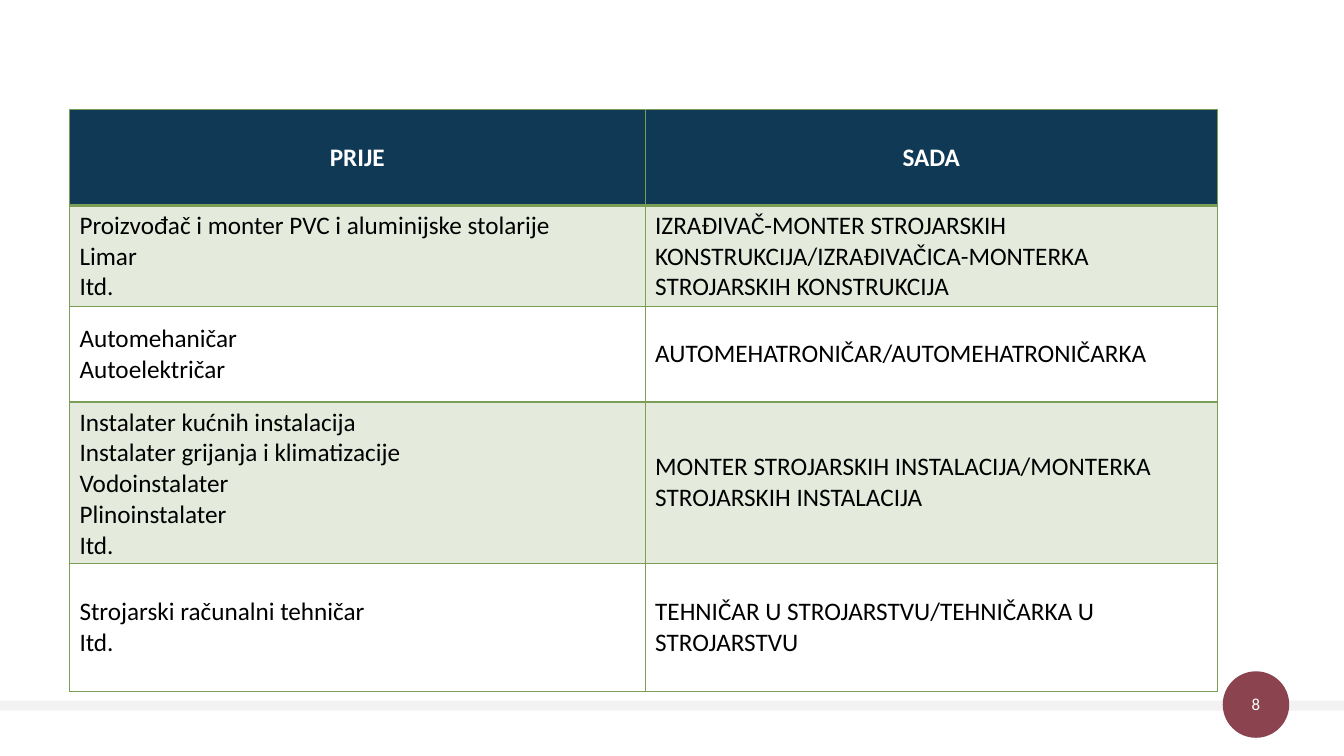
"""Build the slide comparing former and current vocational programmes."""
from lxml import etree
from pptx import Presentation, util as u
from pptx.dml.color import RGBColor
from pptx.enum import shapes, text
from pptx.oxml.ns import qn


def paint(fill, color):
    fill.solid()
    fill.fore_color.rgb = RGBColor.from_string(color)


def write(frame, lines, size, color, align, bold=False):
    frame.word_wrap = True
    for i, line in enumerate(lines):
        para = frame.paragraphs[0] if i == 0 else frame.add_paragraph()
        para.alignment = align
        run = para.add_run()
        run.text = line
        run.font.name = "Calibri"
        run.font.size = u.Pt(size)
        run.font.bold = bold
        paint(run.font.fill, color)


GREEN = "7A9E56"
ROWS = [
    (68.4, ["PRIJE"], ["SADA"]),
    (68.4, ["Proizvođač i monter PVC i aluminijske stolarije", "Limar", "Itd."],
     ["IZRAĐIVAČ-MONTER STROJARSKIH KONSTRUKCIJA/"
      "IZRAĐIVAČICA-MONTERKA STROJARSKIH KONSTRUKCIJA"]),
    (68.4, ["Automehaničar", "Autoelektričar"],
     ["AUTOMEHATRONIČAR/AUTOMEHATRONIČARKA"]),
    (68.4, ["Instalater kućnih instalacija", "Instalater grijanja i klimatizacije",
            "Vodoinstalater", "Plinoinstalater", "Itd."],
     ["MONTER STROJARSKIH INSTALACIJA/MONTERKA STROJARSKIH INSTALACIJA"]),
    (91.4, ["Strojarski računalni tehničar", "Itd."],
     ["TEHNIČAR U STROJARSTVU/TEHNIČARKA U STROJARSTVU"]),
]

deck = Presentation()
deck.slide_width, deck.slide_height = u.Pt(960), u.Pt(540)
slide = deck.slides.add_slide(deck.slide_layouts[6])

kind = shapes.MSO_SHAPE
for form, box, color in [
    (kind.RECTANGLE, (0, 500.4, 960, 7.2), "F2F2F2"),
    (kind.OVAL, (873.4, 479.5, 47.5, 47.5), "8A434F"),
]:
    shape = slide.shapes.add_shape(form, *map(u.Pt, box))
    shape.shadow.inherit = False
    shape.line.fill.background()
    paint(shape.fill, color)

label = slide.shapes.add_textbox(u.Pt(873.4), u.Pt(487.4), u.Pt(47.5), u.Pt(31))
frame = label.text_frame
frame.margin_left = frame.margin_right = frame.margin_top = frame.margin_bottom = 0
frame.vertical_anchor = text.MSO_ANCHOR.MIDDLE
write(frame, ["8"], 12, "FFFFFF", text.PP_ALIGN.CENTER)

table = slide.shapes.add_table(
    len(ROWS), 2, u.Pt(49.6), u.Pt(78.3), u.Pt(820), u.Pt(365)).table
table.horz_banding = False
table.columns[0].width, table.columns[1].width = u.Pt(411.2), u.Pt(408.8)

for r, (height, *cells) in enumerate(ROWS):
    table.rows[r].height = u.Pt(height)
    head = r == 0
    for c, lines in enumerate(cells):
        cell = table.cell(r, c)
        cell.vertical_anchor = text.MSO_ANCHOR.MIDDLE
        write(cell.text_frame, lines, 18, "FFFFFF" if head else "000000",
              text.PP_ALIGN.CENTER if head else text.PP_ALIGN.LEFT, head)
        props = cell._tc.get_or_add_tcPr()
        for side in "LRTB":
            width = 2 if head and side == "B" else 1
            edge = etree.SubElement(props, qn("a:ln" + side), w=str(u.Pt(width)))
            solid = etree.SubElement(edge, qn("a:solidFill"))
            etree.SubElement(solid, qn("a:srgbClr"), val=GREEN)
        if head:
            paint(cell.fill, "0F3955")
        elif r % 2:
            paint(cell.fill, GREEN)
            tint = props.find(qn("a:solidFill"))[0]
            etree.SubElement(tint, qn("a:alpha"), val="20000")
        else:
            cell.fill.background()

deck.save("out.pptx")
